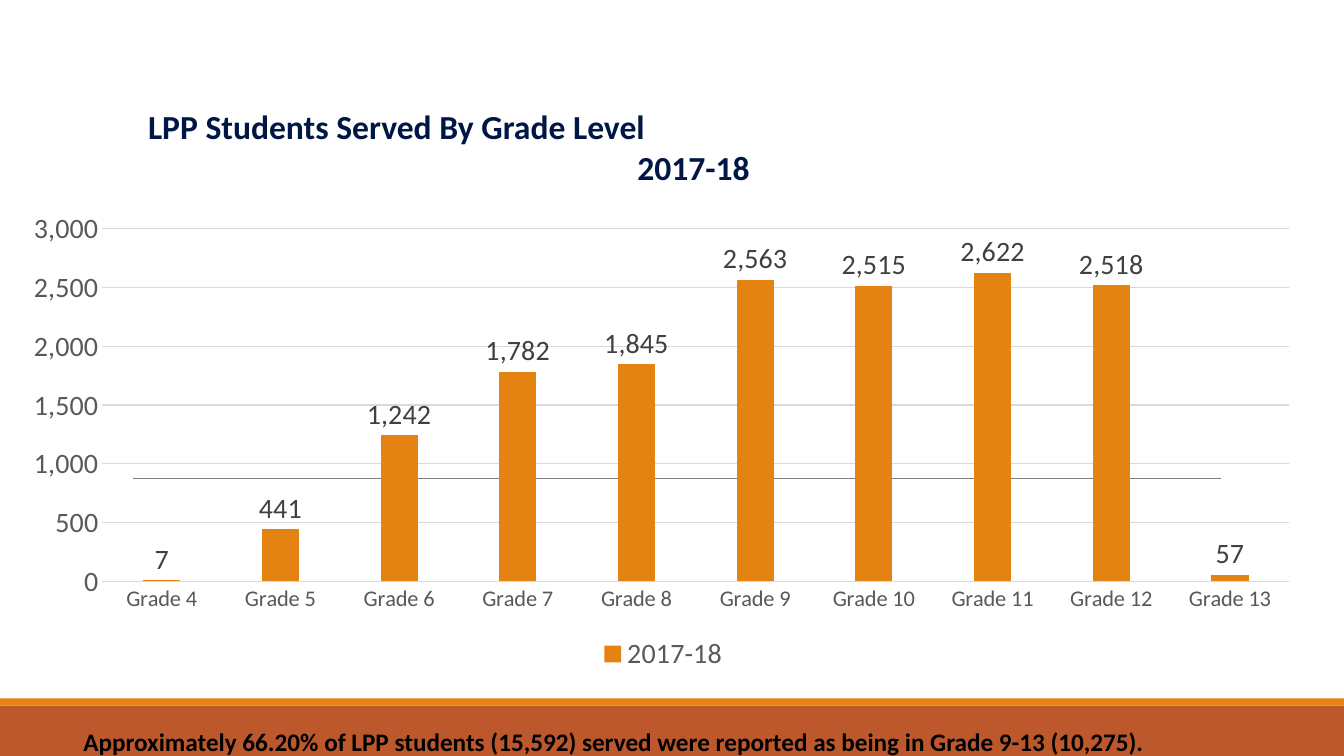
"""Builds the slide on LPP students served by grade level."""
from lxml import etree
from pptx import Presentation
from pptx.chart.data import CategoryChartData
from pptx.dml.color import RGBColor
from pptx.enum.chart import XL_CHART_TYPE, XL_LABEL_POSITION, XL_LEGEND_POSITION, XL_TICK_MARK
from pptx.enum.shapes import MSO_CONNECTOR, MSO_SHAPE
from pptx.enum.text import MSO_ANCHOR, MSO_AUTO_SIZE, PP_ALIGN
from pptx.oxml import parse_xml
from pptx.oxml.ns import nsdecls, qn
from pptx.util import Cm, Pt

COLUMNS = XL_CHART_TYPE.COLUMN_CLUSTERED
OUTSIDE = XL_LABEL_POSITION.OUTSIDE_END
BOTTOM = XL_LEGEND_POSITION.BOTTOM
NO_TICK = XL_TICK_MARK.NONE
STRAIGHT = MSO_CONNECTOR.STRAIGHT
RECTANGLE = MSO_SHAPE.RECTANGLE
TOP = MSO_ANCHOR.TOP
FIXED = MSO_AUTO_SIZE.NONE
LEFT = PP_ALIGN.LEFT
CENTER = PP_ALIGN.CENTER

ORANGE = RGBColor(0xE4, 0x83, 0x12)
RUST = RGBColor(0xBD, 0x58, 0x2C)
NAVY = RGBColor(0x00, 0x17, 0x46)
BLACK = RGBColor(0x00, 0x00, 0x00)
GRAY = RGBColor(0x80, 0x80, 0x80)
AXIS_TEXT = RGBColor(0x59, 0x59, 0x59)
LABEL_TEXT = RGBColor(0x40, 0x40, 0x40)
GRID = RGBColor(0xD9, 0xD9, 0xD9)

TITLE = [("LPP Students Served By Grade Level", LEFT), ("2017-18", CENTER)]
NOTE = ("Approximately 66.20% of LPP students (15,592) served were reported "
        "as being in Grade 9-13 (10,275).")
GRADES = [f"Grade {number}" for number in range(4, 14)]
STUDENTS = [7, 441, 1242, 1782, 1845, 2563, 2515, 2622, 2518, 57]
PLOT_AREA = {"x": 0.07, "y": 0.25, "w": 0.91, "h": 0.59}


class SlideBuilder:
    """Holds the text style and the current slide."""

    def __init__(self, slide, font_name):
        self.slide = slide
        self.font_name = font_name

    def style(self, font, size, color, bold=False):
        """Format a font."""
        font.name = self.font_name
        font.size = Pt(size)
        font.color.rgb = color
        font.bold = bold

    def frame(self, text_frame, lines, size, color):
        """Fill a text frame with bold aligned lines."""
        text_frame.auto_size = FIXED
        text_frame.word_wrap = True
        text_frame.vertical_anchor = TOP
        text_frame.margin_left = text_frame.margin_right = 0
        text_frame.margin_top = text_frame.margin_bottom = 0
        text_frame.text = "\n".join(text for text, _ in lines)
        for para, (_, alignment) in zip(text_frame.paragraphs, lines):
            para.alignment = alignment
            para.line_spacing = 1.0
            para.space_before = Pt(0)
            for span in para.runs:
                self.style(span.font, size, color, bold=True)

    def title(self, left, top, width, height, lines):
        """Place and format the title placeholder."""
        box = self.slide.shapes.title
        box.left, box.top, box.width, box.height = left, top, width, height
        self.frame(box.text_frame, lines, 24, NAVY)

    def text(self, left, top, width, height, text):
        """Add a bold line of text."""
        box = self.slide.shapes.add_textbox(left, top, width, height)
        self.frame(box.text_frame, [(text, LEFT)], 18, BLACK)

    def band(self, left, top, width, height, color):
        """Add a plain colour band."""
        band = self.slide.shapes.add_shape(RECTANGLE, left, top, width, height)
        band.shadow.inherit = False
        band.fill.solid()
        band.fill.fore_color.rgb = color
        band.line.fill.background()

    def rule(self, left, right, height):
        """Add a thin horizontal line."""
        rule = self.slide.shapes.add_connector(STRAIGHT, left, height, right, height)
        rule.line.color.rgb = GRAY
        rule.line.width = Pt(0.5)
        etree.SubElement(rule._element.spPr, qn("a:effectLst"))

    def chart(self, left, top, width, height, name, categories, values):
        """Add a column chart with value labels and a legend."""
        data = CategoryChartData(number_format="#,##0")
        data.categories = categories
        data.add_series(name, values)
        chart = self.slide.shapes.add_chart(COLUMNS, left, top, width, height, data).chart
        chart.has_title = False
        self.style(chart.font, 10, BLACK)

        plot = chart.plots[0]
        plot.vary_by_categories = False
        plot.gap_width = 219
        plot.overlap = -27
        fill = plot.series[0].format.fill
        fill.solid()
        fill.fore_color.rgb = ORANGE
        plot.has_data_labels = True
        labels = plot.data_labels
        labels.show_value = True
        labels.position = OUTSIDE
        labels.number_format = "#,##0"
        labels.number_format_is_linked = False
        self.style(labels.font, 20, LABEL_TEXT)

        chart.has_legend = True
        chart.legend.position = BOTTOM
        chart.legend.include_in_layout = False
        self.style(chart.legend.font, 20, AXIS_TEXT)
        self.axes(chart)
        self.place_plot(chart)

    def axes(self, chart):
        """Format both axes and the gridlines."""
        for axis, size in ((chart.category_axis, 16), (chart.value_axis, 20)):
            axis.major_tick_mark = axis.minor_tick_mark = NO_TICK
            self.style(axis.tick_labels.font, size, AXIS_TEXT)
        value_axis = chart.value_axis
        value_axis.minimum_scale = 0
        value_axis.maximum_scale = 3000
        value_axis.major_unit = 500
        value_axis.tick_labels.number_format = "#,##0"
        value_axis.tick_labels.number_format_is_linked = False
        value_axis.format.line.fill.background()
        for line in (chart.category_axis.format.line, value_axis.major_gridlines.format.line):
            line.color.rgb = GRID
            line.width = Pt(0.75)

    def place_plot(self, chart):
        """Fix the inner plot area within the chart."""
        modes = "".join(f'<c:{side}Mode val="edge"/>' for side in "xy")
        sizes = "".join(f'<c:{side} val="{part}"/>' for side, part in PLOT_AREA.items())
        layout = parse_xml(
            f'<c:layout {nsdecls("c")}><c:manualLayout><c:layoutTarget val="inner"/>'
            f"{modes}{sizes}</c:manualLayout></c:layout>")
        plot_area = chart._chartSpace.chart.plotArea
        for previous in plot_area.findall(qn("c:layout")):
            plot_area.remove(previous)
        plot_area.insert(0, layout)


def main():
    """Build and save the deck."""
    deck = Presentation()
    deck.slide_width, deck.slide_height = Cm(33.87), Cm(19.05)
    page = SlideBuilder(deck.slides.add_slide(deck.slide_layouts[5]), "Calibri")
    page.band(0, Cm(17.78), deck.slide_width, Cm(1.27), RUST)
    page.band(0, Cm(17.6), deck.slide_width, Cm(0.18), ORANGE)
    page.rule(Cm(3.35), Cm(30.78), Cm(12.06))
    page.chart(Cm(0.28), Cm(2), Cm(32.87), Cm(15.06), "2017-18", GRADES, STUDENTS)
    page.title(Cm(3.73), Cm(2.68), Cm(27.5), Cm(2.1), TITLE)
    page.text(Cm(2.1), Cm(18.3), Cm(27.2), Cm(0.75), NOTE)
    deck.save("out.pptx")


if __name__ == "__main__":
    main()
